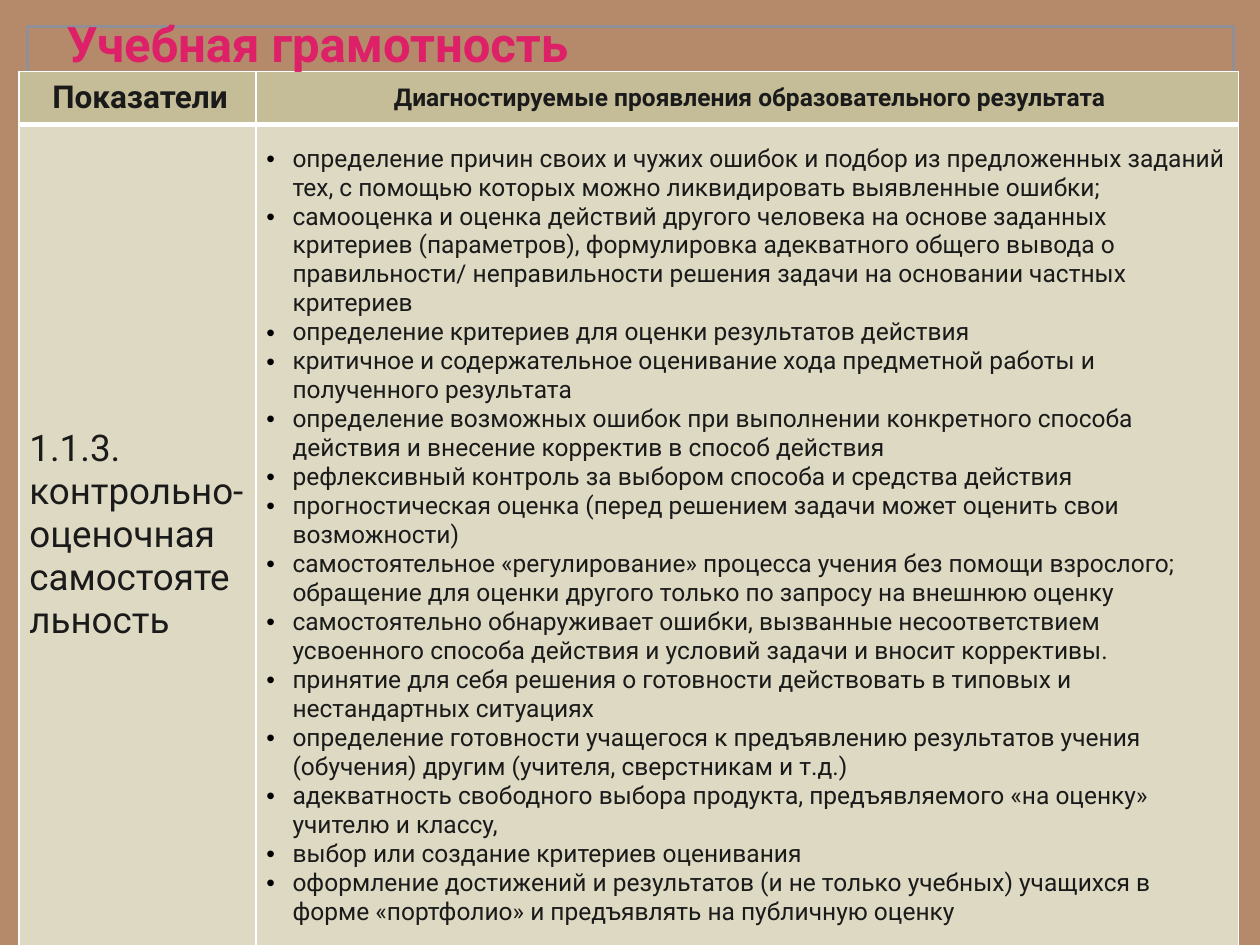
"""Build the slide on learning literacy: indicators and their diagnosed results."""
from lxml import etree
from pptx import Presentation
from pptx.dml.color import RGBColor
from pptx.enum import shapes, text
from pptx.oxml.ns import qn
from pptx.util import Pt

TITLE = "Учебная грамотность"
HEADERS = ["Показатели", "Диагностируемые проявления образовательного результата"]
INDICATOR = "1.1.3. контрольно-оценочная самостоятельность"
RESULTS = [
    "определение причин своих и чужих ошибок и подбор из предложенных заданий тех, с помощью которых можно ликвидировать выявленные ошибки;",
    "самооценка и оценка действий другого человека на основе заданных критериев (параметров), формулировка адекватного общего вывода о правильности/ неправильности решения задачи на основании частных критериев",
    "определение критериев для оценки результатов действия",
    "критичное и содержательное оценивание хода предметной работы и полученного результата",
    "определение возможных ошибок при выполнении конкретного способа действия и внесение корректив в способ действия",
    "рефлексивный контроль за выбором способа и средства действия",
    "прогностическая оценка (перед решением задачи может оценить свои возможности)",
    "самостоятельное «регулирование» процесса учения без помощи взрослого; обращение для оценки другого только по запросу на внешнюю оценку",
    "самостоятельно обнаруживает ошибки, вызванные несоответствием усвоенного способа действия и условий задачи и вносит коррективы.",
    "принятие для себя решения о готовности действовать в типовых и нестандартных ситуациях",
    "определение готовности учащегося к предъявлению результатов учения (обучения) другим (учителя, сверстникам и т.д.)",
    "адекватность свободного выбора продукта, предъявляемого «на оценку» учителю и классу,",
    "выбор или создание критериев оценивания",
    "оформление достижений и результатов (и не только учебных) учащихся в форме «портфолио» и предъявлять на публичную оценку",
]
THEME = {
    "font": "Roboto", "ground": "B58A6B", "frame": "908F95", "title": "DD2067",
    "ink": "1A1A1A", "bullet": "000000", "rule": "FFFFFF", "head": "C4BD97", "body": "DDD9C3",
    "title_size": 28, "head_size": 18, "indicator_size": 21, "text_size": 14,
}
COLUMNS = [135.4, 561.6]
ROWS = [30.2, 469.4]
CELL_INSET = 3


def color(name):
    return RGBColor.from_string(THEME[name])


def style(paragraph, size, ink="ink", bold=False):
    for run in paragraph.runs:
        run.font.name = THEME["font"]
        run.font.size = Pt(THEME[size])
        run.font.bold = bold
        run.font.color.rgb = color(ink)


def indent(paragraph, left, first=0):
    properties = paragraph._p.get_or_add_pPr()
    properties.set("marL", str(Pt(left)))
    properties.set("indent", str(Pt(first)))
    return properties


def add_bullet(paragraph):
    properties = indent(paragraph, 18, -15)
    tint = etree.SubElement(properties, qn("a:buClr"))
    etree.SubElement(tint, qn("a:srgbClr"), val=THEME["bullet"])
    etree.SubElement(properties, qn("a:buFont"), typeface="Arial")
    etree.SubElement(properties, qn("a:buChar"), char="•")


def dress(cell, fill, top, bottom):
    properties = cell._tc.get_or_add_tcPr()
    for side, width in (("L", 1), ("R", 1), ("T", top), ("B", bottom)):
        border = etree.SubElement(properties, qn(f"a:ln{side}"), w=str(Pt(width)))
        solid = etree.SubElement(border, qn("a:solidFill"))
        etree.SubElement(solid, qn("a:srgbClr"), val=THEME["rule"])
    cell.fill.solid()
    cell.fill.fore_color.rgb = color(fill)
    cell.vertical_anchor = text.MSO_ANCHOR.MIDDLE
    cell.margin_left = cell.margin_right = Pt(CELL_INSET)
    cell.margin_top = cell.margin_bottom = Pt(CELL_INSET)


def add_frame(slide):
    frame = slide.shapes.add_shape(
        shapes.MSO_SHAPE.RECTANGLE, Pt(15.8), Pt(15.1), Pt(689), Pt(510.5))
    frame.shadow.inherit = False
    frame.fill.background()
    frame.line.color.rgb = color("frame")
    frame.line.width = Pt(2)


def add_indicators(slide):
    table = slide.shapes.add_table(
        len(ROWS), len(COLUMNS), Pt(10.8), Pt(41), Pt(sum(COLUMNS)), Pt(sum(ROWS))).table
    for column, width in zip(table.columns, COLUMNS):
        column.width = Pt(width)
    for row, height in zip(table.rows, ROWS):
        row.height = Pt(height)

    for index, (header, size) in enumerate(zip(HEADERS, ("head_size", "text_size"))):
        heading, body = table.cell(0, index), table.cell(1, index)
        dress(heading, "head", 1, 3)
        dress(body, "body", 3, 1)
        heading.text_frame.text = header
        line = heading.text_frame.paragraphs[0]
        line.alignment = text.PP_ALIGN.CENTER
        indent(line, 3)
        style(line, size, bold=True)

    indicator = table.cell(1, 0).text_frame
    indicator.text = INDICATOR
    indent(indicator.paragraphs[0], 3)
    style(indicator.paragraphs[0], "indicator_size")

    results = table.cell(1, 1).text_frame
    results.text = "\n".join(RESULTS)
    for result in results.paragraphs:
        add_bullet(result)
        style(result, "text_size")


def add_title(slide):
    title = slide.shapes.add_textbox(Pt(15.8), Pt(10.1), Pt(689.8), Pt(33.1)).text_frame
    title.word_wrap = True
    title.vertical_anchor = text.MSO_ANCHOR.MIDDLE
    title.margin_left = title.margin_right = title.margin_top = title.margin_bottom = 0
    title.text = TITLE
    line = title.paragraphs[0]
    line.line_spacing = 0.9
    indent(line, 22.3)
    style(line, "title_size", "title", True)


def main():
    deck = Presentation()
    deck.slide_width, deck.slide_height = Pt(720), Pt(540)
    slide = deck.slides.add_slide(deck.slide_layouts[6])
    slide.background.fill.solid()
    slide.background.fill.fore_color.rgb = color("ground")
    add_frame(slide)
    add_indicators(slide)
    add_title(slide)
    deck.save("out.pptx")


if __name__ == "__main__":
    main()
